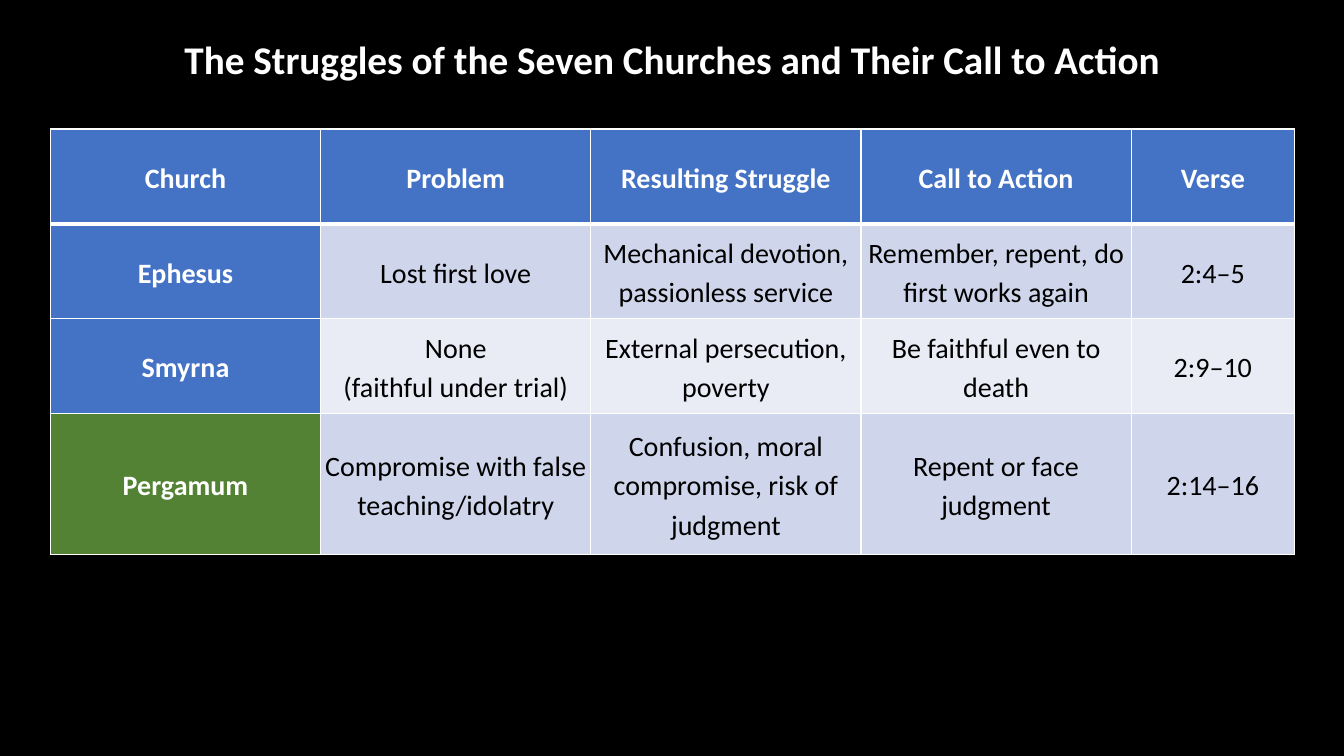
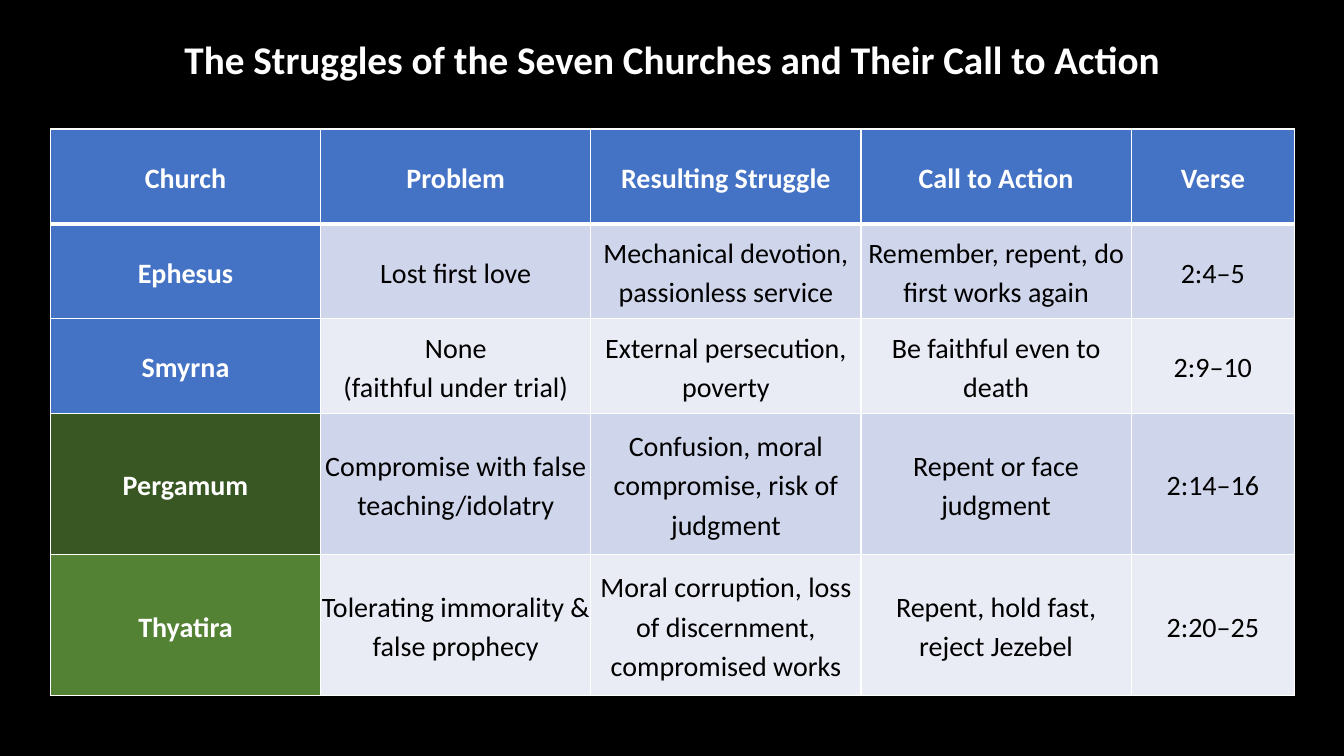
from lxml.etree import SubElement
from pptx import Presentation
from pptx.dml.color import RGBColor
from pptx.enum.text import MSO_ANCHOR, MSO_AUTO_SIZE, PP_ALIGN
from pptx.oxml.ns import qn
from pptx.util import Inches, Pt

COLORS = {
    "background": "000000",
    "light_text": "FFFFFF",
    "dark_text": "000000",
    "border": "FFFFFF",
    "blue": "4472C4",
    "green": "548235",
    "dark_green": "385723",
    "odd_row": "CFD5EA",
    "even_row": "E9EBF5",
}
TITLE = "The Struggles of the Seven Churches and Their Call to Action"
COLUMN_WIDTHS = [2.68, 2.68, 2.68, 2.68, 1.62]
SHORT_ROW, TALL_ROW = 0.94, 1.4
ROWS = [
    (SHORT_ROW, ["Church", "Problem", "Resulting Struggle", "Call to Action", "Verse"]),
    (SHORT_ROW, ["Ephesus", "Lost first love", "Mechanical devotion, passionless service",
                 "Remember, repent, do first works again", "2:4–5"]),
    (SHORT_ROW, ["Smyrna", "None\n(faithful under trial)", "External persecution, poverty",
                 "Be faithful even to death", "2:9–10"]),
    (TALL_ROW, ["Pergamum", "Compromise with false teaching/idolatry",
                "Confusion, moral compromise, risk of judgment",
                "Repent or face judgment", "2:14–16"]),
    (TALL_ROW, ["Thyatira", "Tolerating immorality & false prophecy",
                "Moral corruption, loss of discernment, compromised works",
                "Repent, hold fast, reject Jezebel", "2:20–25"]),
]
# Fills of the church names on each slide; the newest church is green.
CHURCH_FILLS = [
    ["blue", "blue", "green"],
    ["blue", "blue", "dark_green", "green"],
]


def style_paragraph(para, size, color, bold):
    para.alignment = PP_ALIGN.CENTER
    para.font.name = "Calibri"
    para.font.size = Pt(size)
    para.font.bold = bold
    para.font.color.rgb = RGBColor.from_string(COLORS[color])


def add_borders(cell, top, bottom):
    """Draw the four cell borders; top and bottom widths are in points."""
    properties = cell._tc.get_or_add_tcPr()
    for side, width in (("L", 1), ("R", 1), ("T", top), ("B", bottom)):
        line = SubElement(properties, qn(f"a:ln{side}"), w=str(Pt(width)))
        fill = SubElement(line, qn("a:solidFill"))
        SubElement(fill, qn("a:srgbClr"), val=COLORS["border"])


deck = Presentation()
deck.slide_width, deck.slide_height = Inches(13.33), Inches(7.5)
backdrop = deck.slide_master.background.fill
backdrop.solid()
backdrop.fore_color.rgb = RGBColor.from_string(COLORS["background"])

for church_fills in CHURCH_FILLS:
    page = deck.slides.add_slide(deck.slide_layouts[6])
    rows = ROWS[:len(church_fills) + 1]
    table = page.shapes.add_table(
        len(rows), len(COLUMN_WIDTHS), Inches(0.5), Inches(1.28),
        Inches(sum(COLUMN_WIDTHS)), Inches(sum(height for height, _ in rows)),
    ).table
    table.first_col = True
    for column, width in zip(table.columns, COLUMN_WIDTHS):
        column.width = Inches(width)

    for r, (height, texts) in enumerate(rows):
        table.rows[r].height = Inches(height)
        for c, text in enumerate(texts):
            cell = table.cell(r, c)
            if r == 0:
                fill = "blue"
            elif c == 0:
                fill = church_fills[r - 1]
            else:
                fill = "odd_row" if r % 2 else "even_row"
            add_borders(cell, top=3 if r == 1 else 1, bottom=3 if r == 0 else 1)
            cell.fill.solid()
            cell.fill.fore_color.rgb = RGBColor.from_string(COLORS[fill])
            cell.vertical_anchor = MSO_ANCHOR.MIDDLE
            cell.margin_left = cell.margin_right = Inches(0.01)
            cell.margin_top = cell.margin_bottom = Inches(0.01)

            heading = r == 0 or c == 0
            para = cell.text_frame.paragraphs[0]
            para.text = text
            para.line_spacing = 1.15
            para.space_after = Pt(8)
            style_paragraph(para, 20, "light_text" if heading else "dark_text", heading)

    box = page.shapes.add_textbox(Inches(1.34), Inches(0.3), Inches(10.65), Inches(0.57))
    box.text_frame.word_wrap = True
    box.text_frame.auto_size = MSO_AUTO_SIZE.SHAPE_TO_FIT_TEXT
    para = box.text_frame.paragraphs[0]
    para.text = TITLE
    style_paragraph(para, 28, "light_text", True)

deck.save("out.pptx")
